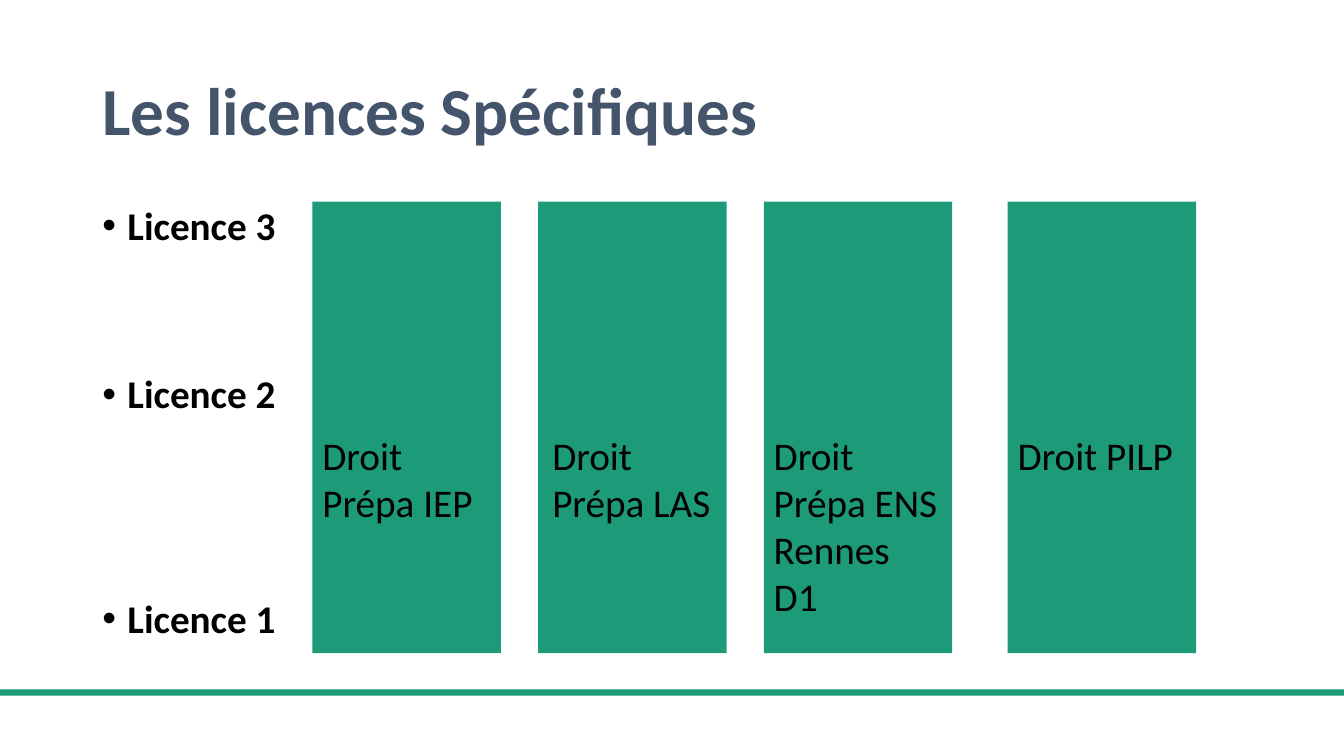
from dataclasses import dataclass

from lxml import etree
from pptx import Presentation
from pptx.dml.color import RGBColor
from pptx.enum.shapes import MSO_SHAPE
from pptx.enum.text import MSO_ANCHOR
from pptx.oxml.ns import qn
from pptx.util import Pt

RECT = MSO_SHAPE.RECTANGLE
TOP, MIDDLE = MSO_ANCHOR.TOP, MSO_ANCHOR.MIDDLE

FONT = "Calibri"
COLORS = {"green": "1D9A78", "title": "44546A", "text": "000000"}
SLIDE_W, SLIDE_H = 960, 540
MARGIN, CONTENT_W = 66, 828
BAR_TOP, BAR_W, BAR_H = 144, 134.6, 322.6
LABEL_TOP = 304.6
BULLET_INDENT = 18


@dataclass
class Track:
    label: str
    left: float
    label_h: float
    label_shift: float = 0


@dataclass
class Level:
    label: str
    space_before: float


TRACKS = [
    Track("Droit Prépa IEP", 223.2, 75),
    Track("Droit Prépa LAS", 384.4, 75, label_shift=3),
    Track("Droit Prépa ENS Rennes D1", 545.6, 143),
    Track("Droit PILP", 719.8, 41),
]
LEVELS = [Level("Licence 3", 0), Level("Licence 2", 90), Level("Licence 1", 130)]


def add_bar(slide, left: float, top: float, width: float, height: float) -> None:
    sp = slide.shapes.add_shape(RECT, Pt(left), Pt(top), Pt(width), Pt(height))
    sp.shadow.inherit = False
    sp.fill.solid()
    sp.fill.fore_color.rgb = RGBColor.from_string(COLORS["green"])
    sp.line.fill.background()


def add_box(slide, left: float, top: float, width: float, height: float, anchor=TOP):
    tf = slide.shapes.add_textbox(Pt(left), Pt(top), Pt(width), Pt(height)).text_frame
    tf.word_wrap = True
    tf.vertical_anchor = anchor
    return tf


def add_run(p, text: str, size: float, color: str = "text", bold: bool = False) -> None:
    r = p.add_run()
    r.text = text
    r.font.name = FONT
    r.font.size = Pt(size)
    r.font.bold = bold
    r.font.color.rgb = RGBColor.from_string(COLORS[color])


def add_bullet(p) -> None:
    pPr = p._p.get_or_add_pPr()
    pPr.set("marL", str(Pt(BULLET_INDENT)))
    pPr.set("indent", str(-Pt(BULLET_INDENT)))
    etree.SubElement(pPr, qn("a:buFont")).set("typeface", "Arial")
    etree.SubElement(pPr, qn("a:buChar")).set("char", "•")


def main() -> None:
    prs = Presentation()
    prs.slide_width, prs.slide_height = Pt(SLIDE_W), Pt(SLIDE_H)
    slide = prs.slides.add_slide(prs.slide_layouts[6])

    # Footer rule
    add_bar(slide, 0, 492.5, SLIDE_W, 4.4)

    # Title
    tf = add_box(slide, MARGIN, 28.8, CONTENT_W, 104.4, MIDDLE)
    p = tf.paragraphs[0]
    p.line_spacing = 0.9
    add_run(p, "Les licences Spécifiques", 48, "title", bold=True)

    # Year levels
    tf = add_box(slide, MARGIN, BAR_TOP, CONTENT_W, 342.7)
    for i, level in enumerate(LEVELS):
        p = tf.add_paragraph() if i else tf.paragraphs[0]
        p.line_spacing = 0.9
        p.space_before = Pt(level.space_before)
        add_bullet(p)
        add_run(p, level.label, 28, bold=True)

    # Tracks
    for track in TRACKS:
        add_bar(slide, track.left, BAR_TOP, BAR_W, BAR_H)
        tf = add_box(slide, track.left + track.label_shift, LABEL_TOP, BAR_W, track.label_h)
        add_run(tf.paragraphs[0], track.label, 28)

    prs.save("out.pptx")


if __name__ == "__main__":
    main()
